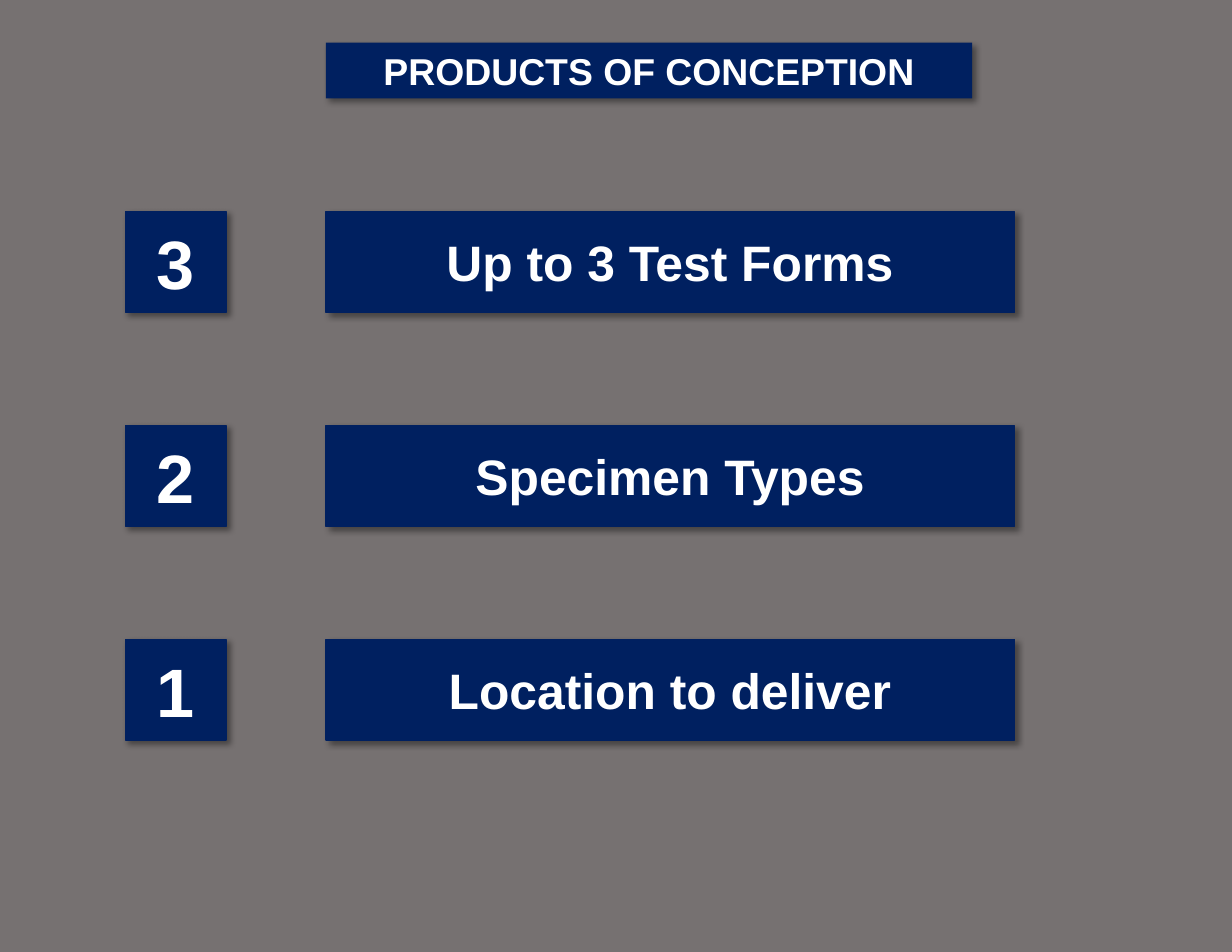
from lxml import etree
from pptx import Presentation
from pptx.dml.color import RGBColor
from pptx.enum.shapes import MSO_SHAPE
from pptx.enum.text import MSO_ANCHOR, MSO_AUTO_SIZE, PP_ALIGN
from pptx.oxml.ns import qn
from pptx.util import Inches, Pt

RECT = MSO_SHAPE.RECTANGLE
PROCESS = MSO_SHAPE.FLOWCHART_PROCESS
TOP, MIDDLE = MSO_ANCHOR.TOP, MSO_ANCHOR.MIDDLE
CENTER = PP_ALIGN.CENTER
GROW = MSO_AUTO_SIZE.SHAPE_TO_FIT_TEXT


def color(code):
    return RGBColor.from_string(code)


class Board:
    font = "Arial"
    navy = "002060"
    white = "FFFFFF"
    gray = "767171"

    def __init__(self, slide):
        self.slide = slide
        fill = slide.background.fill
        fill.solid()
        fill.fore_color.rgb = color(self.gray)

    def shade(self, shape):
        shape.shadow.inherit = False
        effects = shape._element.spPr.find(qn("a:effectLst"))
        outer = etree.SubElement(
            effects, qn("a:outerShdw"), blurRad=str(Pt(4)), dist=str(Pt(3)),
            dir=str(45 * 60000), algn="tl", rotWithShape="0")
        tint = etree.SubElement(outer, qn("a:srgbClr"), val="000000")
        etree.SubElement(tint, qn("a:alpha"), val="40000")

    def box(self, parent, kind, text, place, size, anchor=MIDDLE):
        shape = parent.shapes.add_shape(kind, *map(Inches, place))
        shape.fill.solid()
        shape.fill.fore_color.rgb = color(self.navy)
        self.shade(shape)
        frame = shape.text_frame
        frame.word_wrap = True
        frame.vertical_anchor = anchor
        frame.text = text
        para = frame.paragraphs[0]
        para.alignment = CENTER
        font = para.runs[0].font
        font.name, font.size, font.bold = self.font, Pt(size), True
        font.color.rgb = color(self.white)
        return shape

    def title(self, text, place):
        shape = self.box(self.slide, RECT, text, place, 24, TOP)
        shape.line.fill.background()
        shape.text_frame.auto_size = GROW

    def step(self, number, label, top):
        group = self.slide.shapes.add_group_shape()
        parts = ((number, 1.12, 0.9, 44), (label, 2.91, 6.15, 32))
        for text, left, width, size in parts:
            place = (left, top, width, 0.9)
            shape = self.box(group, PROCESS, text, place, size)
            shape.line.color.rgb = color(self.navy)
            shape.line.width = Pt(1)


def main():
    deck = Presentation()
    deck.slide_width, deck.slide_height = Inches(11), Inches(8.5)
    board = Board(deck.slides.add_slide(deck.slide_layouts[6]))

    # Heading
    board.title("PRODUCTS OF CONCEPTION", (2.91, 0.38, 5.77, 0.5))

    # Countdown rows, evenly spaced
    labels = ("Up to 3 Test Forms", "Specimen Types", "Location to deliver")
    for row, label in enumerate(labels):
        board.step(str(len(labels) - row), label, 1.89 + row * 1.91)

    deck.save("out.pptx")


if __name__ == "__main__":
    main()
